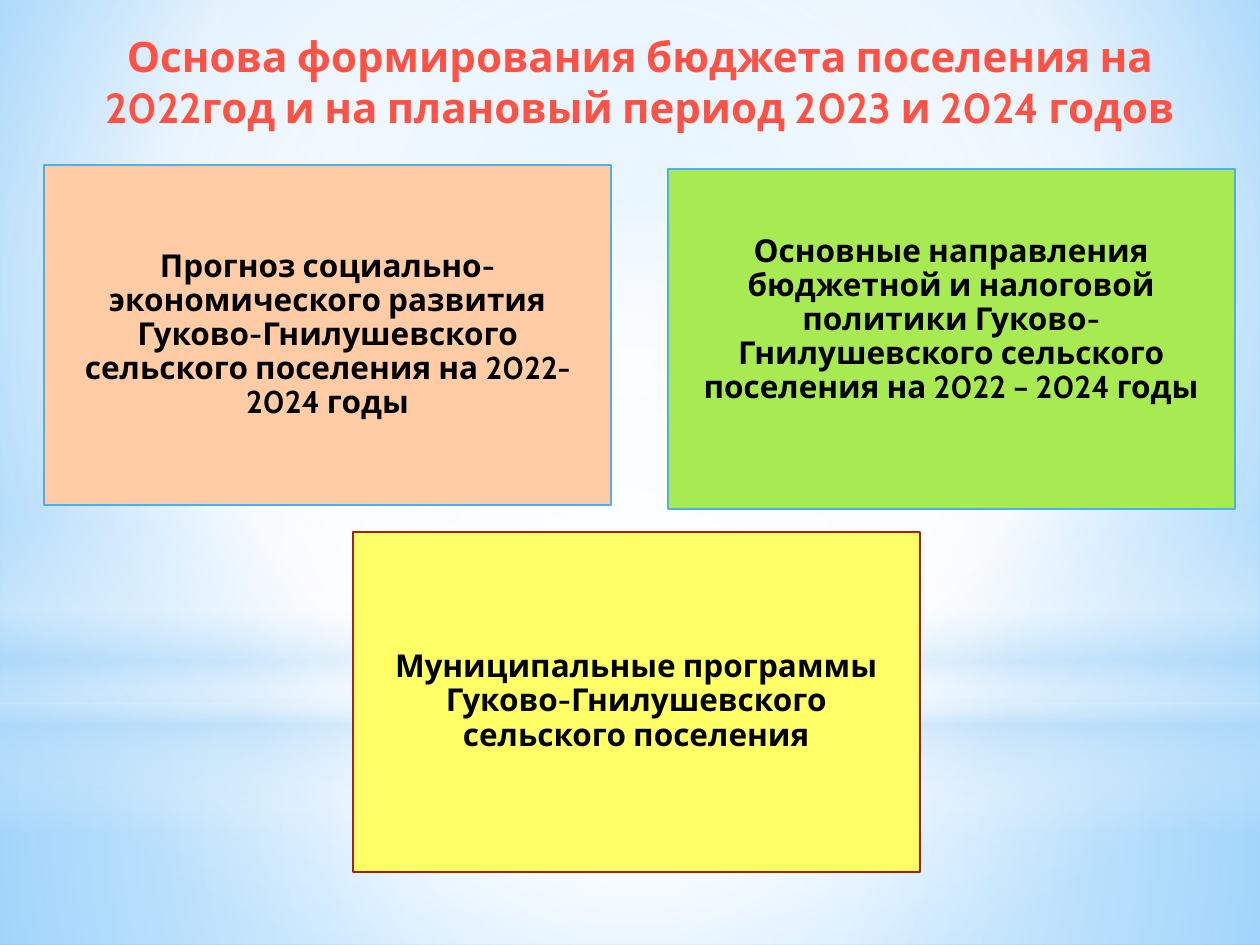
from lxml import etree
from pptx import Presentation
from pptx.dml.color import RGBColor
from pptx.enum import shapes, text
from pptx.oxml import ns
from pptx.util import Inches, Pt

FONT = "Cabin"
BLACK = RGBColor(0x00, 0x00, 0x00)
CORAL = RGBColor(0xFF, 0x52, 0x44)
PEACH = RGBColor(0xFF, 0xCC, 0xA6)
GREEN = RGBColor(0xA7, 0xEA, 0x52)
YELLOW = RGBColor(0xFF, 0xFF, 0x66)
BLUE = RGBColor(0x4F, 0xAD, 0xF3)
DARK_RED = RGBColor(0xB0, 0x1F, 0x07)
WHITE = RGBColor(0xFF, 0xFF, 0xFF)
MIST = RGBColor(0xB4, 0xDC, 0xFA)
SKY = RGBColor(0x9E, 0xD5, 0xFF)
DEEP_SKY = RGBColor(0x5B, 0xB9, 0xFF)

WIDTH, HEIGHT = 10, 7.5
HORIZON = 5.58
BOX_SIZE = (4.5, 2.7)
INSET = 0.07
CENTRE = (50, 50, 50, 50)

TITLE = "Основа формирования бюджета поселения на 2022год и на плановый период 2023 и 2024 годов"
# text, left and top, fill, outline, extra space below the text
FOUNDATIONS = [
    ("Прогноз социально-экономического развития Гуково-Гнилушевского сельского поселения на 2022-2024 годы",
     (0.35, 1.31), PEACH, BLUE, 0),
    ("Основные направления бюджетной и налоговой политики Гуково-Гнилушевского сельского поселения на 2022 – 2024 годы",
     (5.3, 1.34), GREEN, BLUE, 0.3),
    ("Муниципальные программы Гуково-Гнилушевского сельского поселения",
     (2.8, 4.22), YELLOW, DARK_RED, 0),
]

# Gradient stops: position %, colour, opacity %
SKY_STOPS = [(0, SKY, 100), (60, WHITE, 100), (100, DEEP_SKY, 100)]
# preset, top, height, stops, focus (None for a vertical gradient)
LIGHTS = [
    ("RECTANGLE", HORIZON, HEIGHT - HORIZON,
     [(0, WHITE, 91), (37, WHITE, 76), (100, MIST, 79)], CENTRE),
    ("RECTANGLE", 0, HORIZON,
     [(0, WHITE, 89), (48, WHITE, 62), (100, MIST, 79)], CENTRE),
    ("RECTANGLE", 4.12, 2.5,
     [(0, WHITE, 0), (29, WHITE, 30), (45, MIST, 40), (55, WHITE, 26),
      (65, MIST, 60), (100, WHITE, 0)], None),
    ("OVAL", 1.75, HORIZON, [(0, WHITE, 100), (56, WHITE, 0)], CENTRE),
]


def paint_gradient(fill, element, stops, focus):
    """Give the element a circular gradient around focus, or a vertical one."""
    fill.solid()
    solid = element.find(".//" + ns.qn("a:solidFill"))
    gradient = etree.Element(ns.qn("a:gradFill"), rotWithShape="1")
    stop_list = etree.SubElement(gradient, ns.qn("a:gsLst"))
    for position, colour, opacity in stops:
        stop = etree.SubElement(stop_list, ns.qn("a:gs"), pos=str(position * 1000))
        tint = etree.SubElement(stop, ns.qn("a:srgbClr"), val=str(colour))
        if opacity < 100:
            etree.SubElement(tint, ns.qn("a:alpha"), val=str(opacity * 1000))
    if focus:
        circle = etree.SubElement(gradient, ns.qn("a:path"), {"path": "circle"})
        edges = {side: str(share * 1000) for side, share in zip("ltrb", focus)}
        etree.SubElement(circle, ns.qn("a:fillToRect"), edges)
    else:
        etree.SubElement(gradient, ns.qn("a:lin"), ang="5400000", scaled="0")
    solid.getparent().replace(solid, gradient)


def add_block(slide, preset, left, top, width, height):
    block = slide.shapes.add_shape(
        getattr(shapes.MSO_SHAPE, preset), *map(Inches, (left, top, width, height)))
    block.shadow.inherit = False
    return block


def write(frame, wording, size, colour, line_spacing):
    frame.text = wording
    frame.word_wrap = True
    frame.auto_size = text.MSO_AUTO_SIZE.NONE
    frame.vertical_anchor = text.MSO_ANCHOR.MIDDLE
    paragraph = frame.paragraphs[0]
    paragraph.alignment = text.PP_ALIGN.CENTER
    paragraph.line_spacing = line_spacing
    font = paragraph.runs[0].font
    for attribute, value in {"name": FONT, "size": Pt(size), "bold": True}.items():
        setattr(font, attribute, value)
    font.color.rgb = colour


def add_backdrop(slide):
    paint_gradient(slide.background.fill, slide.element, SKY_STOPS, (20, 10, 20, 60))
    for preset, top, height, stops, focus in LIGHTS:
        light = add_block(slide, preset, 0, top, WIDTH, height)
        light.line.fill.background()
        paint_gradient(light.fill, light.element, stops, focus)


def add_title(slide):
    title = slide.shapes.title
    slide.shapes.element.append(title.element)  # bring above the backdrop
    place = {"left": 0.33, "top": 0.21, "width": 9.5, "height": 0.87}
    for attribute, value in place.items():
        setattr(title, attribute, Inches(value))
    write(title.text_frame, TITLE, 24, CORAL, 1.0)


def add_foundations(slide):
    for wording, corner, colour, outline, space_below in FOUNDATIONS:
        box = add_block(slide, "RECTANGLE", *corner, *BOX_SIZE)
        box.fill.solid()
        box.fill.fore_color.rgb = colour
        box.line.color.rgb = outline
        box.line.width = Pt(1.25)
        frame = box.text_frame
        for side in ("left", "top", "right", "bottom"):
            extra = space_below if side == "bottom" else 0
            setattr(frame, f"margin_{side}", Inches(INSET + extra))
        write(frame, wording, 18, BLACK, 0.9)


def main():
    deck = Presentation()
    deck.slide_width, deck.slide_height = Inches(WIDTH), Inches(HEIGHT)
    slide = deck.slides.add_slide(deck.slide_layouts.get_by_name("Title Only"))
    add_backdrop(slide)
    add_title(slide)
    add_foundations(slide)
    deck.save("out.pptx")


if __name__ == "__main__":
    main()
